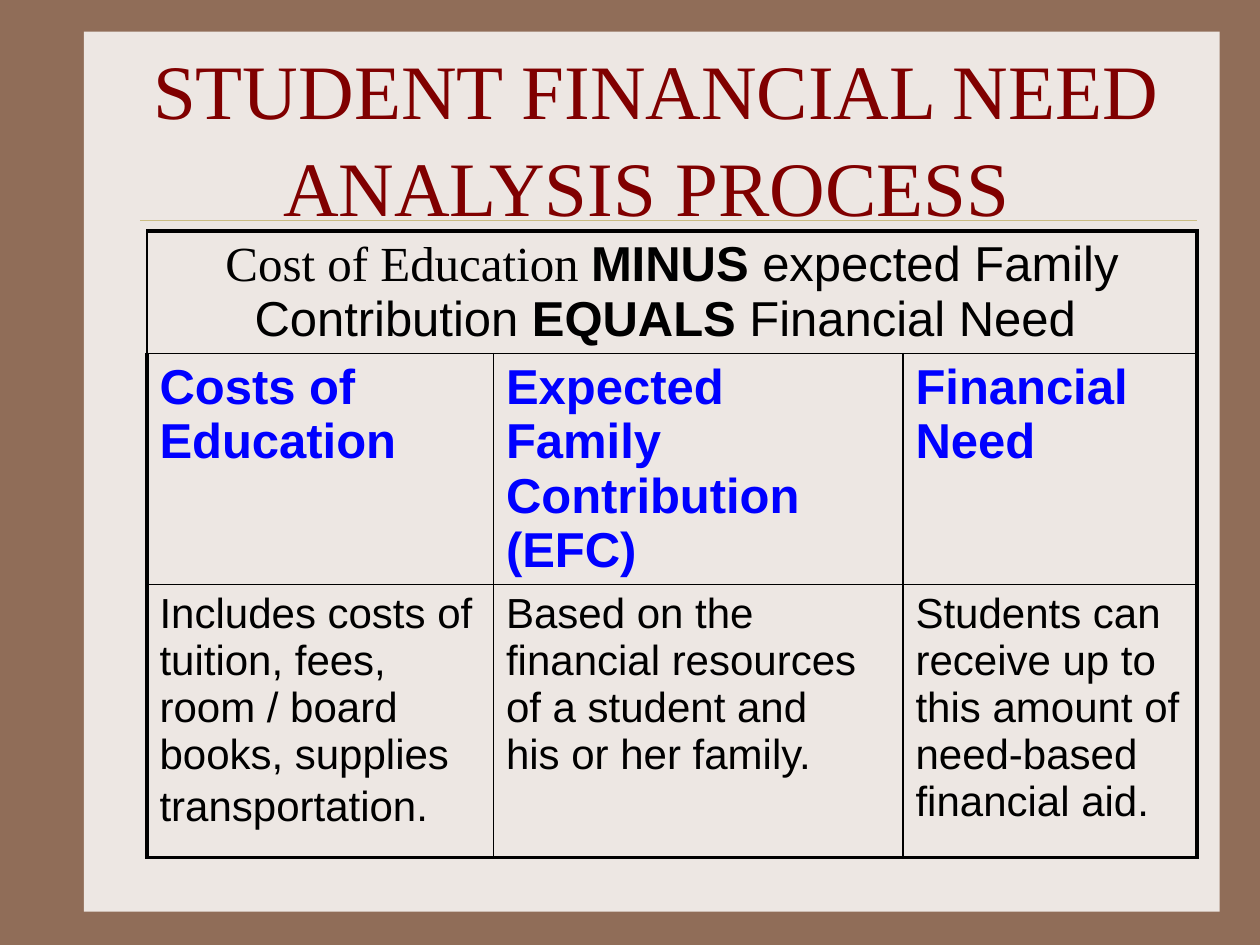
from dataclasses import dataclass

from lxml import etree
from pptx import Presentation
from pptx.dml.color import RGBColor
from pptx.enum.shapes import MSO_CONNECTOR, MSO_SHAPE
from pptx.enum.text import MSO_ANCHOR, PP_ALIGN
from pptx.oxml.ns import qn
from pptx.util import Pt

RECTANGLE = MSO_SHAPE.RECTANGLE
STRAIGHT = MSO_CONNECTOR.STRAIGHT
MIDDLE = MSO_ANCHOR.MIDDLE
CENTER, LEFT = PP_ALIGN.CENTER, PP_ALIGN.LEFT


@dataclass(frozen=True)
class Theme:
    frame: str = "906D58"
    panel: str = "EDE7E3"
    rule: str = "CBBD83"
    title: str = "800000"
    heading: str = "0000FF"
    ink: str = "000000"
    serif: str = "Times New Roman"
    sans: str = "Arial"
    title_size: float = 44
    heading_size: float = 28
    body_size: float = 24
    thick: float = 2.25
    thin: float = 1


THEME = Theme()


@dataclass(frozen=True)
class Span:
    text: str
    font: str = THEME.sans
    size: float = THEME.heading_size
    bold: bool = False
    color: str = THEME.ink


def heading(text: str) -> list[Span]:
    return [Span(text, bold=True, color=THEME.heading)]


def body(text: str) -> list[Span]:
    return [Span(text, size=THEME.body_size)]


FORMULA = [
    Span("Cost of Education ", font=THEME.serif),
    Span("MINUS ", bold=True),
    Span("expected Family Contribution "),
    Span("EQUALS", bold=True),
    Span(" Financial Need "),
]
ROWS = [
    [FORMULA],
    [heading("Costs of Education"),
     heading("Expected Family\nContribution (EFC)"),
     heading("Financial Need")],
    [body("Includes costs of tuition, fees,\nroom / board\nbooks, supplies\ntransportation.")
     + [Span(" ", font=THEME.serif)],
     body("Based on the\nfinancial resources\nof a student and\nhis or her family."),
     body("Students can receive up to this amount of need-based financial aid.")],
]
COLUMN_WIDTHS = [198, 234, 168]
ROW_HEIGHTS = [70, 132, 156]


def rgb(color: str) -> RGBColor:
    return RGBColor.from_string(color)


def add_text(para, text: str, *, font: str, size: float, bold: bool, color: str) -> None:
    """Add formatted text; each newline becomes a line break."""
    for number, line in enumerate(text.split("\n")):
        if number:
            para.add_line_break()
        run = para.add_run()
        run.text = line
        run.font.name = font
        run.font.size = Pt(size)
        run.font.bold = bold
        run.font.color.rgb = rgb(color)


def write_spans(frame, spans: list[Span], align) -> None:
    para = frame.paragraphs[0]
    para.alignment = align
    for span in spans:
        add_text(para, span.text, font=span.font, size=span.size,
                 bold=span.bold, color=span.color)


def set_border(cell, side: str, width: float) -> None:
    properties = cell._tc.get_or_add_tcPr()
    line = etree.SubElement(properties, qn(f"a:ln{side}"), w=str(Pt(width)))
    fill = etree.SubElement(line, qn("a:solidFill"))
    etree.SubElement(fill, qn("a:srgbClr"), val=THEME.ink)


def draw_background(page) -> None:
    page.background.fill.solid()
    page.background.fill.fore_color.rgb = rgb(THEME.frame)

    panel = page.shapes.add_shape(RECTANGLE, Pt(48), Pt(18), Pt(649), Pt(503))
    panel.shadow.inherit = False
    panel.fill.solid()
    panel.fill.fore_color.rgb = rgb(THEME.panel)
    panel.line.fill.background()

    rule = page.shapes.add_connector(STRAIGHT, Pt(80), Pt(126), Pt(684), Pt(126))
    rule.line.color.rgb = rgb(THEME.rule)
    rule.line.width = Pt(0.25)
    etree.SubElement(rule.element.spPr, qn("a:effectLst"))

    # Keep the title in front of the panel and rule
    for shape in (panel, rule):
        page.shapes.title.element.addprevious(shape.element)


def draw_title(page) -> None:
    title = page.shapes.title
    title.left, title.top, title.width, title.height = Pt(66), Pt(36), Pt(618), Pt(78)
    frame = title.text_frame
    frame.word_wrap = True
    frame.vertical_anchor = MIDDLE
    frame.margin_top = Pt(8)
    write_spans(frame, [Span("STUDENT FINANCIAL NEED ANALYSIS PROCESS ", font=THEME.serif,
                             size=THEME.title_size, color=THEME.title)], CENTER)
    frame.paragraphs[0].line_spacing = 1.05


def draw_table(page) -> None:
    table = page.shapes.add_table(
        len(ROW_HEIGHTS), len(COLUMN_WIDTHS), Pt(84), Pt(132),
        Pt(sum(COLUMN_WIDTHS)), Pt(sum(ROW_HEIGHTS))).table
    table.first_row = table.horz_banding = False
    for column, width in zip(table.columns, COLUMN_WIDTHS):
        column.width = Pt(width)
    for row, height in zip(table.rows, ROW_HEIGHTS):
        row.height = Pt(height)

    # Thick outer frame, thin inner lines; the formula row has a thin left edge
    last_row, last_column = len(ROW_HEIGHTS) - 1, len(COLUMN_WIDTHS) - 1
    for r in range(last_row + 1):
        for c in range(last_column + 1):
            cell = table.cell(r, c)
            edges = {"L": c == 0 and r > 0, "R": c == last_column or r == 0,
                     "T": r == 0, "B": r == last_row}
            for side, outer in edges.items():
                set_border(cell, side, THEME.thick if outer else THEME.thin)
            cell.fill.background()
    table.cell(0, 0).merge(table.cell(0, last_column))

    for r, contents in enumerate(ROWS):
        for c, spans in enumerate(contents):
            write_spans(table.cell(r, c).text_frame, spans, LEFT if r else CENTER)


def main() -> None:
    deck = Presentation()
    deck.slide_width, deck.slide_height = Pt(720), Pt(540)
    page = deck.slides.add_slide(deck.slide_layouts[5])
    draw_background(page)
    draw_title(page)
    draw_table(page)
    deck.save("out.pptx")


if __name__ == "__main__":
    main()
